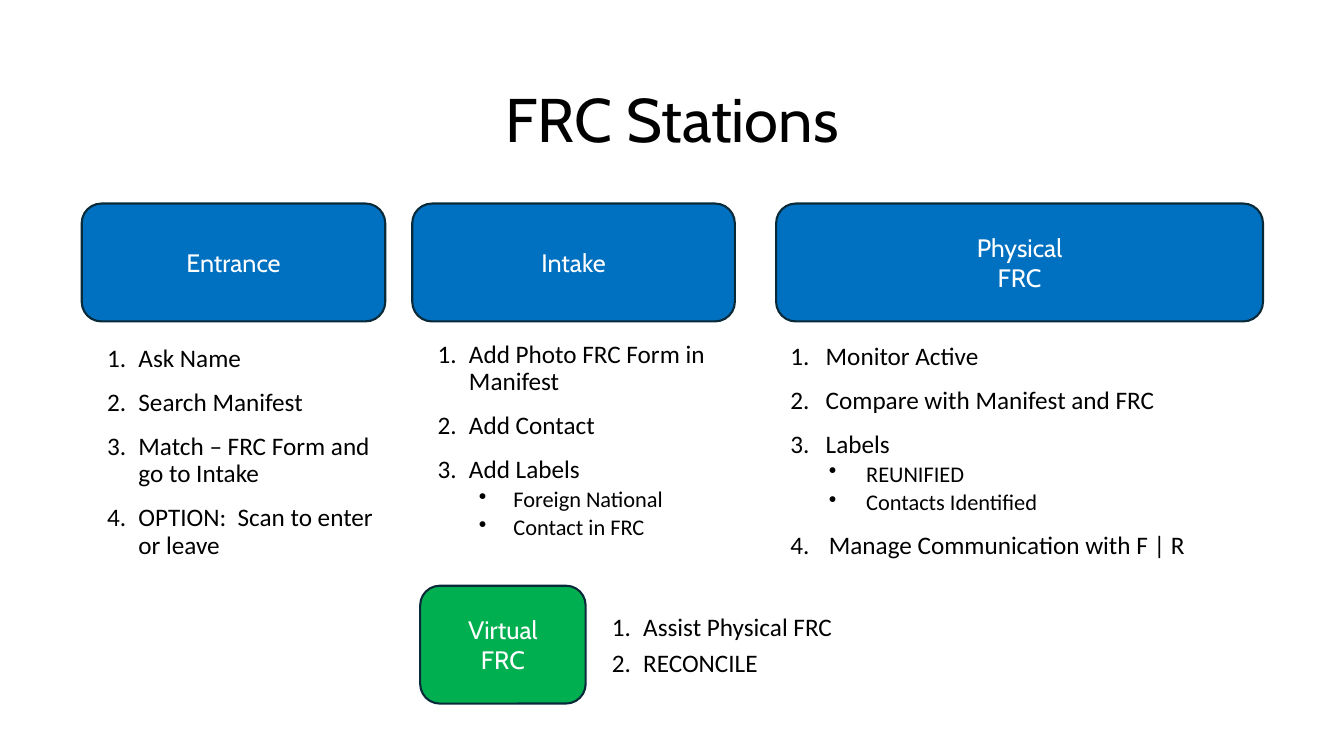
from dataclasses import dataclass

from lxml import etree
from pptx import Presentation
from pptx.dml.color import RGBColor
from pptx.enum.shapes import MSO_SHAPE
from pptx.enum.text import MSO_ANCHOR, MSO_AUTO_SIZE, PP_ALIGN
from pptx.oxml.ns import qn
from pptx.util import Cm, Pt

ROUND = MSO_SHAPE.ROUNDED_RECTANGLE
MIDDLE = MSO_ANCHOR.MIDDLE
GROW = MSO_AUTO_SIZE.SHAPE_TO_FIT_TEXT
CENTER = PP_ALIGN.CENTER

BLUE, GREEN, EDGE = "0070C0", "00B050", "092A39"
BLACK, WHITE = "000000", "FFFFFF"
HEAD, BODY = "Cabin", "Calibri"
TOP, HIGH = 5.13, 2.97  # station row, box height


@dataclass
class Box:
    text: str
    left: float
    top: float
    width: float
    fill: str = BLUE


@dataclass
class Item:
    text: str
    sub: bool = False
    hang: float = 0.0  # own indent, else that of the list


@dataclass
class Steps:
    left: float
    top: float
    width: float
    height: float
    items: list[Item]
    gap: int = 12
    hang: float = 0.79
    inner: float = 0.87
    wrap: bool = True


BOXES = [
    Box("Entrance", 2.06, TOP, 7.65),
    Box("Intake", 10.39, TOP, 8.13),
    Box("Physical\nFRC", 19.56, TOP, 12.27),
    Box("Virtual\nFRC", 10.59, 14.76, 4.17, GREEN),
]

LISTS = [
    Steps(2.06, 8.59, 8.13, 5.69, [
        Item("Ask Name"),
        Item("Search Manifest"),
        Item("Match – FRC Form and go to Intake"),
        Item("OPTION:  Scan to enter or leave"),
    ]),
    Steps(10.39, 8.48, 8.13, 5.33, [
        Item("Add Photo FRC Form in Manifest"),
        Item("Add Contact"),
        Item("Add Labels"),
        Item("Foreign National", sub=True),
        Item("Contact in FRC", sub=True),
    ]),
    Steps(19.28, 8.53, 12.55, 5.77, [
        Item("Monitor Active"),
        Item("Compare with Manifest and FRC"),
        Item("Labels"),
        Item("REUNIFIED", sub=True),
        Item("Contacts Identified", sub=True),
        Item("Manage Communication with F | R", hang=0.97),
    ], hang=0.89, inner=0.94),
    Steps(14.78, 15.37, 6.83, 1.85, [
        Item("Assist Physical FRC"),
        Item("RECONCILE"),
    ], gap=6, wrap=False),
]


def color(code: str) -> RGBColor:
    return RGBColor.from_string(code)


def apply(thing, form: dict) -> None:
    for name, value in form.items():
        setattr(thing, name, value)


def style(para, face: str, size: int, code: str) -> None:
    for run in para.runs:
        apply(run.font, {"name": face, "size": Pt(size)})
        run.font.color.rgb = color(code)


def add_title(slide, text: str) -> None:
    area = slide.shapes.add_textbox(0, Cm(1.88), Cm(33.87), Cm(2.41))
    frame = area.text_frame
    apply(frame, {"text": text, "word_wrap": True, "vertical_anchor": MIDDLE})
    para = frame.paragraphs[0]
    apply(para, {"alignment": CENTER, "line_spacing": 0.9})
    style(para, HEAD, 44, BLACK)


def add_box(slide, box: Box) -> None:
    shape = slide.shapes.add_shape(
        ROUND, Cm(box.left), Cm(box.top), Cm(box.width), Cm(HIGH))
    shape.shadow.inherit = False
    shape.fill.solid()
    shape.fill.fore_color.rgb = color(box.fill)
    shape.line.color.rgb = color(EDGE)
    shape.line.width = Pt(1.5)
    frame = shape.text_frame
    apply(frame, {"text": box.text, "word_wrap": True,
                  "vertical_anchor": MIDDLE})
    for para in frame.paragraphs:
        para.alignment = CENTER
        style(para, HEAD, 18, WHITE)


def add_mark(para, sub: bool, left: float, hang: float) -> None:
    props = para._p.get_or_add_pPr()
    props.set("marL", str(Cm(left)))
    props.set("indent", str(-Cm(hang)))
    if sub:
        etree.SubElement(props, qn("a:buChar")).set("char", "•")
    else:
        etree.SubElement(props, qn("a:buAutoNum")).set("type", "arabicPeriod")


def add_steps(slide, steps: Steps) -> None:
    area = slide.shapes.add_textbox(
        Cm(steps.left), Cm(steps.top), Cm(steps.width), Cm(steps.height))
    frame = area.text_frame
    apply(frame, {
        "text": "\n".join(item.text for item in steps.items),
        "word_wrap": steps.wrap, "auto_size": GROW,
        "margin_left": Cm(0.64), "margin_right": Cm(0.64),
    })
    # Items sit close above a sub-item
    nexts = steps.items[1:] + [Item("")]
    for para, item, after in zip(frame.paragraphs, steps.items, nexts):
        hang = steps.inner if item.sub else item.hang or steps.hang
        add_mark(para, item.sub, 1.91 if item.sub else hang, hang)
        apply(para, {
            "level": int(item.sub), "line_spacing": 0.9,
            "space_after": Pt(3 if after.sub else steps.gap),
        })
        style(para, BODY, 16 if item.sub else 18, BLACK)


def main() -> None:
    deck = Presentation()
    apply(deck, {"slide_width": Cm(33.87), "slide_height": Cm(19.05)})
    slide = deck.slides.add_slide(deck.slide_layouts[6])

    # Title
    add_title(slide, "FRC Stations")

    # Step lists
    for steps in LISTS:
        add_steps(slide, steps)

    # Station boxes
    for box in BOXES:
        add_box(slide, box)

    deck.save("out.pptx")


if __name__ == "__main__":
    main()
